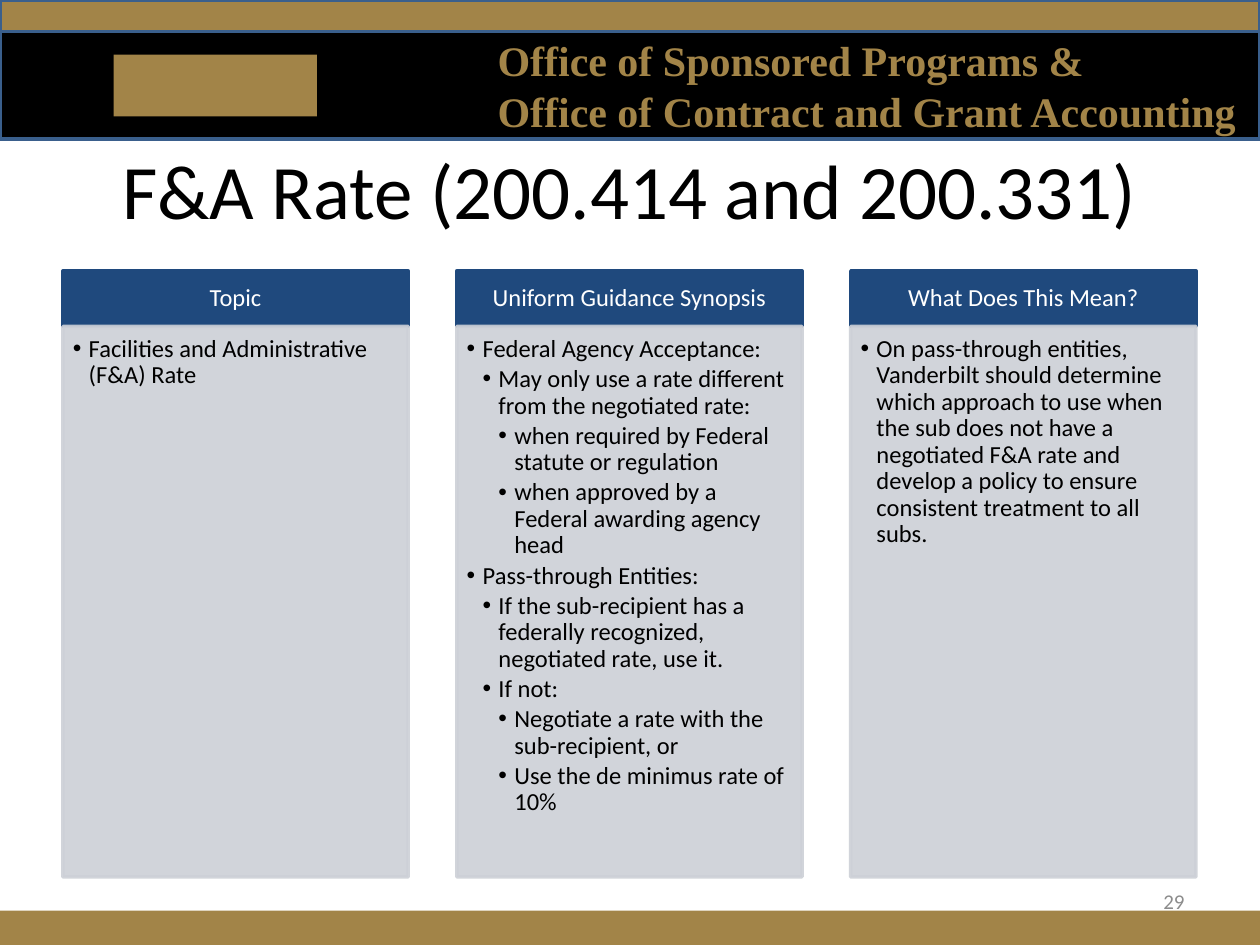
from lxml.etree import SubElement
from pptx import Presentation
from pptx.dml.color import RGBColor
from pptx.enum.shapes import MSO_SHAPE as Shape
from pptx.enum.text import MSO_ANCHOR as Anchor, PP_ALIGN as Align
from pptx.oxml.ns import qn
from pptx.util import Cm, Pt

# Content
TITLE = "F&A Rate (200.414 and 200.331)"
OFFICES = ["Office of Sponsored Programs &", "Office of Contract and Grant Accounting"]
PAGE_NUMBER = "29"
COLUMNS = [  # heading, then (level, text) bullets
    ("Topic", [(1, "Facilities and Administrative (F&A) Rate")]),
    ("Uniform Guidance Synopsis", [
        (1, "Federal Agency Acceptance:"),
        (2, "May only use a rate different from the negotiated rate:"),
        (3, "when required by Federal statute or regulation"),
        (3, "when approved by a Federal awarding agency head"),
        (1, "Pass-through Entities:"),
        (2, "If the sub-recipient has a federally recognized, negotiated rate, use it."),
        (2, "If not:"),
        (3, "Negotiate a rate with the sub-recipient, or"),
        (3, "Use the de minimus rate of 10%"),
    ]),
    ("What Does This Mean?", [
        (1, "On pass-through entities, Vanderbilt should determine which approach to use "
            "when the sub does not have a negotiated F&A rate and develop a policy to "
            "ensure consistent treatment to all subs."),
    ]),
]

# Style and grid, in centimetres
GOLD, BLACK, WHITE = "A28448", "000000", "FFFFFF"
NAVY, PALE, EDGE, GREY = "1F497D", "CDD0D7", "3A5F8C", "8C8C8C"
SANS, SERIF = "Calibri", "Times New Roman"
WIDTH, HEIGHT = 25.4, 19.05
LEFT, TOP, PITCH, COLUMN_WIDTH = 1.27, 5.46, 7.94, 6.96
HEADING_HEIGHT, BODY_HEIGHT = 1.12, 11.1
INDENT = 0.32


def color(value):
    return RGBColor.from_string(value)


def set_alpha(fill_parent, percent):
    for node in fill_parent.iter(qn("a:srgbClr")):
        SubElement(node, qn("a:alpha"), val=str(percent * 1000))


def add_box(slide, area, fill, line=None, alpha=None):
    box = slide.shapes.add_shape(Shape.RECTANGLE, *map(Cm, area))
    box.shadow.inherit = False
    box.fill.solid()
    box.fill.fore_color.rgb = color(fill)
    if line:
        box.line.color.rgb = color(line)
        box.line.width = Pt(2)
    else:
        box.line.fill.background()
    if alpha:
        set_alpha(box.element.spPr, alpha)
    return box


def add_text_box(slide, area):
    return slide.shapes.add_textbox(*map(Cm, area))


def write(box, lines, size, ink, font=SANS, bold=False, align=Align.LEFT,
          anchor=Anchor.MIDDLE, insets=None):
    frame = box.text_frame
    frame.word_wrap = True
    frame.vertical_anchor = anchor
    if insets:
        (frame.margin_left, frame.margin_top,
         frame.margin_right, frame.margin_bottom) = map(Cm, insets)
    frame.text = "\n".join(lines)
    for para in frame.paragraphs:
        para.alignment = align
        for span in para.runs:
            span.font.name, span.font.size, span.font.bold = font, Pt(size), bold
            span.font.color.rgb = color(ink)
    return frame.paragraphs


def add_bullet(para, level):
    para.level = level
    para.line_spacing = 0.9
    para.space_after = Pt(2.1)
    properties = para._p.get_or_add_pPr()
    properties.set("marL", str(Cm(INDENT * level)))
    properties.set("indent", str(Cm(-INDENT)))
    SubElement(properties, qn("a:buFont"), typeface="Arial")
    SubElement(properties, qn("a:buChar"), char="•")


def add_banner(slide):
    add_box(slide, (0, 0.64, WIDTH, 2.16), BLACK, EDGE)
    offices = add_text_box(slide, (9.78, 0.56, 15.62, 2.31))
    write(offices, OFFICES, 24, GOLD, SERIF, True)
    add_box(slide, (2.29, 1.1, 4.1, 1.25), GOLD)  # plain emblem block
    add_box(slide, (0, 0, WIDTH, 0.64), GOLD, EDGE)
    add_box(slide, (0, 18.36, WIDTH, HEIGHT - 18.36), GOLD)


def add_column(slide, index, heading, bullets):
    left = LEFT + index * PITCH
    head = add_box(slide, (left, TOP, COLUMN_WIDTH, HEADING_HEIGHT), NAVY, NAVY)
    paras = write(head, [heading], 14, WHITE, align=Align.CENTER,
                  insets=(0.28, 0.15, 0.28, 0.15))
    paras[0].line_spacing = 0.9
    body = add_box(slide, (left, TOP + HEADING_HEIGHT, COLUMN_WIDTH, BODY_HEIGHT),
                   PALE, PALE, 90)
    paras = write(body, [text for _, text in bullets], 14, BLACK,
                  anchor=Anchor.TOP, insets=(0.2, 0.2, 0.28, 0.3))
    for para, (level, _) in zip(paras, bullets):
        add_bullet(para, level)


def main():
    deck = Presentation()
    deck.slide_width, deck.slide_height = Cm(WIDTH), Cm(HEIGHT)
    slide = deck.slides.add_slide(deck.slide_layouts[5])
    add_banner(slide)

    # Title
    title = slide.shapes.title
    title.left, title.top, title.width, title.height = map(Cm, (1.27, 2.64, 22.86, 2.34))
    write(title, [TITLE], 44, BLACK, align=Align.CENTER)

    # Three columns
    for index, (heading, bullets) in enumerate(COLUMNS):
        add_column(slide, index, heading, bullets)

    # Page number
    number = add_text_box(slide, (18.21, 17.65, 5.92, 1.02))
    write(number, [PAGE_NUMBER], 12, GREY, align=Align.RIGHT)
    deck.save("out.pptx")


if __name__ == "__main__":
    main()
